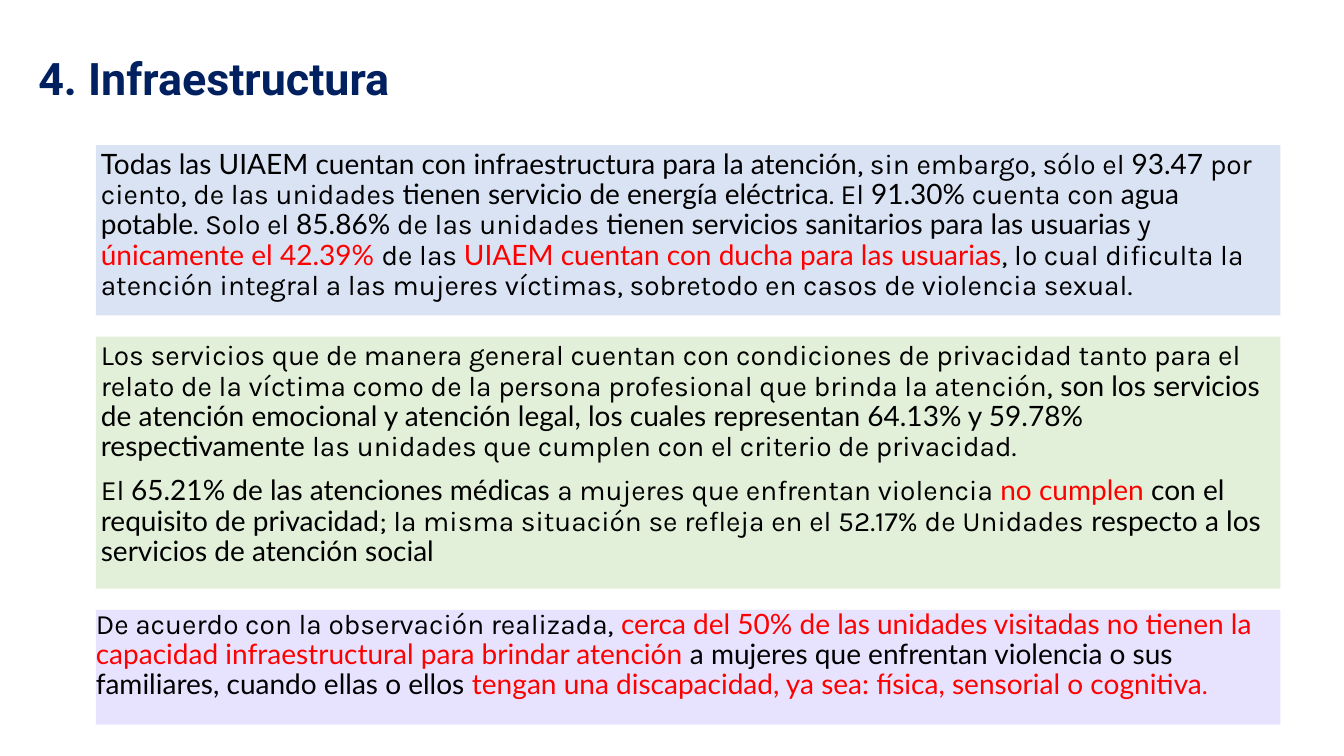
import pptx
import pptx.util
import pptx.dml.color
import pptx.enum.shapes
import pptx.enum.text

Inches = pptx.util.Inches
Pt = pptx.util.Pt

COLORS = {
    "title": "002060",
    "text": "000000",
    "alert": "FF0000",
    "services": "DAE3F3",
    "privacy": "E2F0D9",
    "disability": "E7E2FE",
}

# Run styles: regular wording, key facts and warnings
PLAIN = {"font": "Karla", "color": "text"}
KEY = {"font": "Lato", "color": "text"}
ALERT = {"font": "Lato", "color": "alert"}
ALERT_END = {"font": "Karla", "color": "alert"}

SERVICES = [[
    ("Todas las UIAEM cuentan con infraestructura para la atención", KEY),
    (", sin embargo, sólo el ", PLAIN),
    ("93.47", KEY),
    (" por ciento, de las unidades ", PLAIN),
    ("tienen servicio de energía eléctrica", KEY),
    (". El ", PLAIN),
    ("91.30%", KEY),
    (" cuenta con ", PLAIN),
    ("agua potable", KEY),
    (". Solo el ", PLAIN),
    ("85.86%", KEY),
    (" de las unidades ", PLAIN),
    ("tienen servicios sanitarios para las usuarias", KEY),
    (" y ", PLAIN),
    ("únicamente el 42.39% ", ALERT),
    ("de las ", PLAIN),
    ("UIAEM cuentan con ducha para las usuarias", ALERT),
    (", lo cual dificulta la atención integral a las mujeres víctimas, "
     "sobretodo en casos de violencia sexual.", PLAIN),
]]

PRIVACY = [
    [
        ("Los servicios que de manera general cuentan con condiciones de privacidad "
         "tanto para el relato de la víctima como de la persona profesional que "
         "brinda la atención, ", PLAIN),
        ("son los servicios de atención emocional y atención legal, los cuales "
         "representan 64.13% y 59.78% respectivamente ", KEY),
        ("las unidades que cumplen con el criterio de privacidad.", PLAIN),
    ],
    [
        ("El ", PLAIN),
        ("65.21% de las atenciones médicas ", KEY),
        ("a mujeres que enfrentan violencia ", PLAIN),
        ("no cumplen ", ALERT),
        ("con el requisito de privacidad", KEY),
        ("; la misma situación se refleja en el 52.17% de Unidades ", PLAIN),
        ("respecto a los servicios de atención social", KEY),
    ],
]

DISABILITY = [[
    ("De acuerdo con la observación realizada, ", PLAIN),
    ("cerca del 50% de las unidades visitadas no tienen la capacidad "
     "infraestructural para brindar atención ", ALERT),
    ("a mujeres que enfrentan violencia o sus familiares, cuando ellas o ellos ", KEY),
    ("tengan una discapacidad, ya sea: física, sensorial o cognitiva", ALERT),
    (".", ALERT_END),
]]


def rgb(name):
    return pptx.dml.color.RGBColor.from_string(COLORS[name])


def add_run(paragraph, text, *, font, color, size=20, bold=False):
    run = paragraph.add_run()
    run.text = text
    run.font.name = font
    run.font.size = Pt(size)
    run.font.bold = bold
    run.font.color.rgb = rgb(color)


def prepare_frame(frame, inset, anchor):
    frame.word_wrap = True
    frame.vertical_anchor = anchor
    frame.margin_left = frame.margin_right = Inches(inset)
    frame.margin_top = frame.margin_bottom = Inches(inset)


def format_paragraph(paragraph):
    paragraph.alignment = pptx.enum.text.PP_ALIGN.LEFT
    paragraph.line_spacing = 0.9


def add_title(slide, left, top, width, height):
    title = slide.shapes.add_textbox(
        Inches(left), Inches(top), Inches(width), Inches(height))
    prepare_frame(title.text_frame, 0, pptx.enum.text.MSO_ANCHOR.MIDDLE)
    heading = title.text_frame.paragraphs[0]
    format_paragraph(heading)
    add_run(heading, "4. Infraestructura",
            font="Roboto", color="title", size=32, bold=True)


def add_finding(slide, left, top, width, height, *, fill, paragraphs, inset=0.05):
    panel = slide.shapes.add_shape(
        pptx.enum.shapes.MSO_SHAPE.RECTANGLE,
        Inches(left), Inches(top), Inches(width), Inches(height))
    panel.shadow.inherit = False
    panel.fill.solid()
    panel.fill.fore_color.rgb = rgb(fill)
    panel.line.fill.background()

    frame = panel.text_frame
    prepare_frame(frame, inset, pptx.enum.text.MSO_ANCHOR.TOP)
    for index, runs in enumerate(paragraphs):
        paragraph = frame.add_paragraph() if index else frame.paragraphs[0]
        format_paragraph(paragraph)
        if index:
            paragraph.space_before = Pt(10)
        for text, style in runs:
            add_run(paragraph, text, **style)


def main():
    presentation = pptx.Presentation()
    presentation.slide_width = Inches(13.33)
    presentation.slide_height = Inches(7.5)
    slide = presentation.slides.add_slide(presentation.slide_layouts[6])

    add_title(slide, 0.38, 0.28, 4.76, 1.05)

    # Findings stacked with equal gaps
    left, top, width, gap = 0.95, 1.44, 11.75, 0.21
    findings = [
        (1.69, {"fill": "services", "paragraphs": SERVICES}),
        (2.5, {"fill": "privacy", "paragraphs": PRIVACY}),
        (1.14, {"fill": "disability", "paragraphs": DISABILITY, "inset": 0}),
    ]
    for height, content in findings:
        add_finding(slide, left, top, width, height, **content)
        top += height + gap

    presentation.save("out.pptx")


if __name__ == "__main__":
    main()
